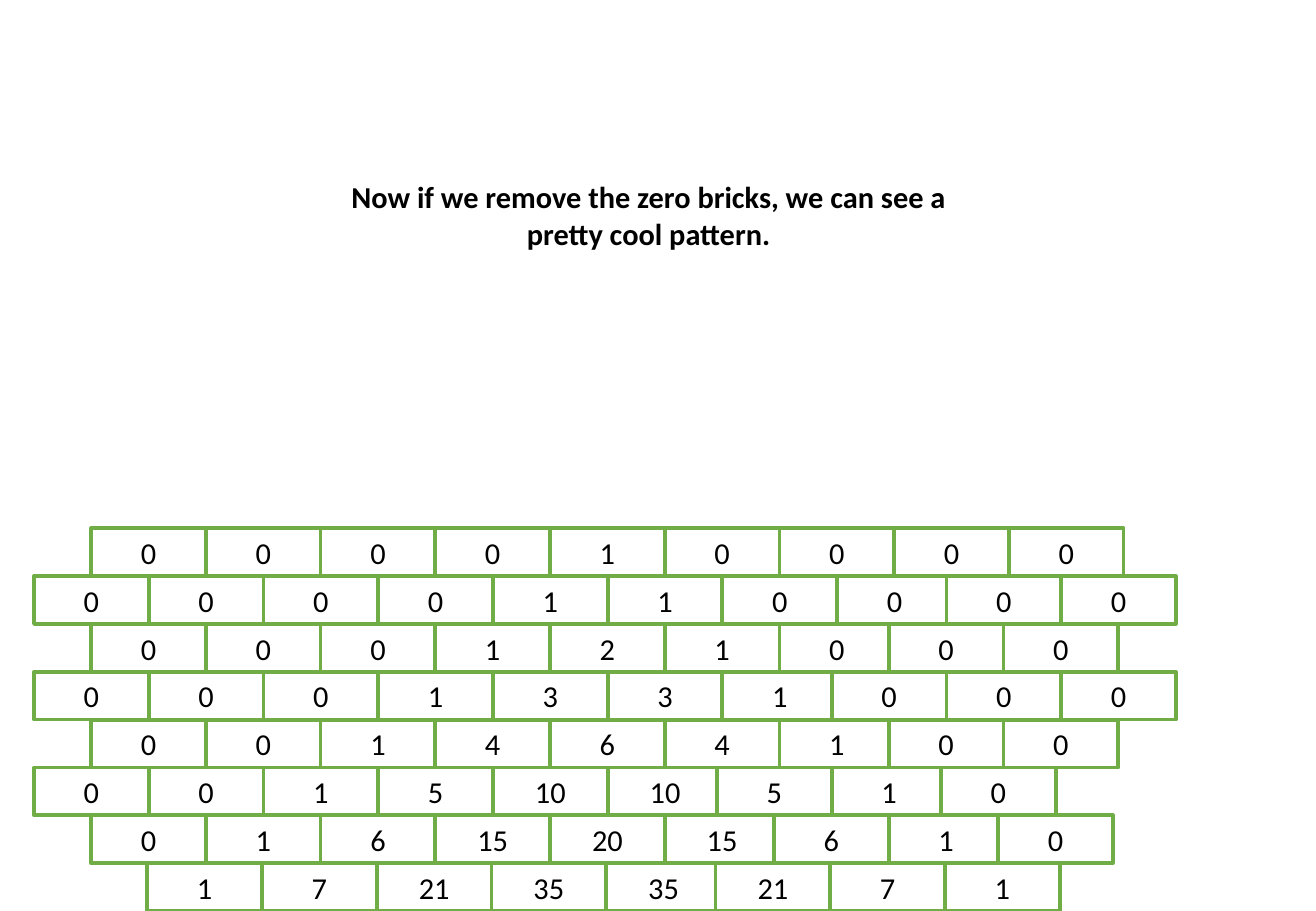
from dataclasses import dataclass

from pptx import Presentation
from pptx.dml.color import RGBColor
from pptx.enum.shapes import MSO_SHAPE
from pptx.enum.text import MSO_ANCHOR, MSO_AUTO_SIZE, PP_ALIGN
from pptx.util import Pt

RECT = MSO_SHAPE.RECTANGLE
TOP, MIDDLE = MSO_ANCHOR.TOP, MSO_ANCHOR.MIDDLE
CENTER = PP_ALIGN.CENTER
NO_AUTOFIT = MSO_AUTO_SIZE.NONE

WHITE, BLACK, GREEN = "FFFFFF", "000000", "70AD47"
BRICK_W, BRICK_H = 68, 28.35
WALL_TOP = 313.2
SLIP = 3.2
OUTER, INNER, LAST = 20.16, 54, 87.3


@dataclass
class Row:
    """A course of bricks; from each column in slips it moves left by SLIP."""
    left: float
    values: tuple[int, ...]
    slips: tuple[int, ...] = ()


ROWS = (
    Row(INNER, (0, 0, 0, 0, 1, 0, 0, 0, 0)),
    Row(OUTER, (0, 0, 0, 0, 1, 1, 0, 0, 0, 0), (8,)),
    Row(INNER, (0, 0, 0, 1, 2, 1, 0, 0, 0), (7,)),
    Row(OUTER, (0, 0, 0, 1, 3, 3, 1, 0, 0, 0), (7,)),
    Row(INNER, (0, 0, 1, 4, 6, 4, 1, 0, 0), (7,)),
    Row(OUTER, (0, 0, 1, 5, 10, 10, 5, 1, 0), (6, 8)),
    Row(INNER, (0, 1, 6, 15, 20, 15, 6, 1, 0), (6, 8)),
    Row(LAST, (1, 7, 21, 35, 35, 21, 7, 1), (5,)),
)


def color(value: str) -> RGBColor:
    return RGBColor.from_string(value)


def write(sp, text: str, anchor, bold: bool) -> None:
    tf = sp.text_frame
    tf.word_wrap = True
    tf.auto_size = NO_AUTOFIT
    tf.vertical_anchor = anchor
    p = tf.paragraphs[0]
    p.alignment = CENTER
    r = p.add_run()
    r.text = text
    for name, value in {"name": "Calibri", "size": Pt(18), "bold": bold}.items():
        setattr(r.font, name, value)
    r.font.color.rgb = color(BLACK)


def draw_brick(slide, left: float, top: float, value: int) -> None:
    sp = slide.shapes.add_shape(RECT, Pt(left), Pt(top), Pt(BRICK_W), Pt(BRICK_H))
    sp.shadow.inherit = False
    sp.fill.solid()
    sp.fill.fore_color.rgb = color(WHITE)
    sp.line.color.rgb = color(GREEN)
    sp.line.width = Pt(2.25)
    write(sp, str(value), MIDDLE, False)


def draw_row(slide, row: Row, top: float) -> None:
    for col, value in enumerate(row.values):
        slipped = sum(col >= start for start in row.slips)
        draw_brick(slide, row.left + col * BRICK_W - slipped * SLIP, top, value)


def draw_title(slide) -> None:
    sp = slide.shapes.title
    box = {"left": 189.36, "top": 102.24, "width": 390.24, "height": 72.72}
    for name, value in box.items():
        setattr(sp, name, Pt(value))
    write(sp, "Now if we remove the zero bricks, we can see a pretty cool pattern.",
          TOP, True)


def main() -> None:
    prs = Presentation()
    prs.slide_width, prs.slide_height = Pt(780), Pt(540)
    slide = prs.slides.add_slide(prs.slide_layouts.get_by_name("Title Only"))
    for i, row in enumerate(ROWS):
        draw_row(slide, row, WALL_TOP + i * BRICK_H)
    draw_title(slide)
    prs.save("out.pptx")


if __name__ == "__main__":
    main()
